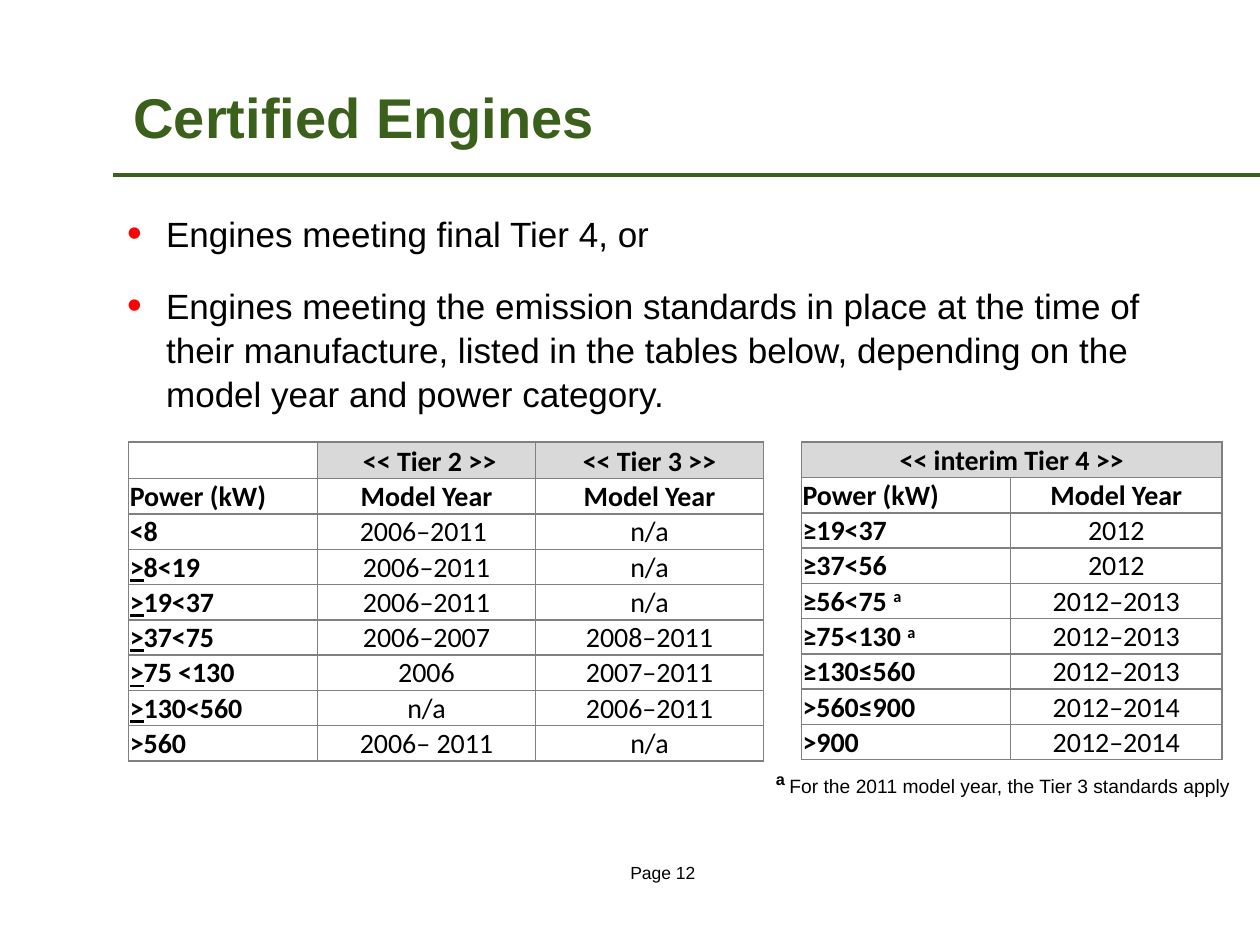
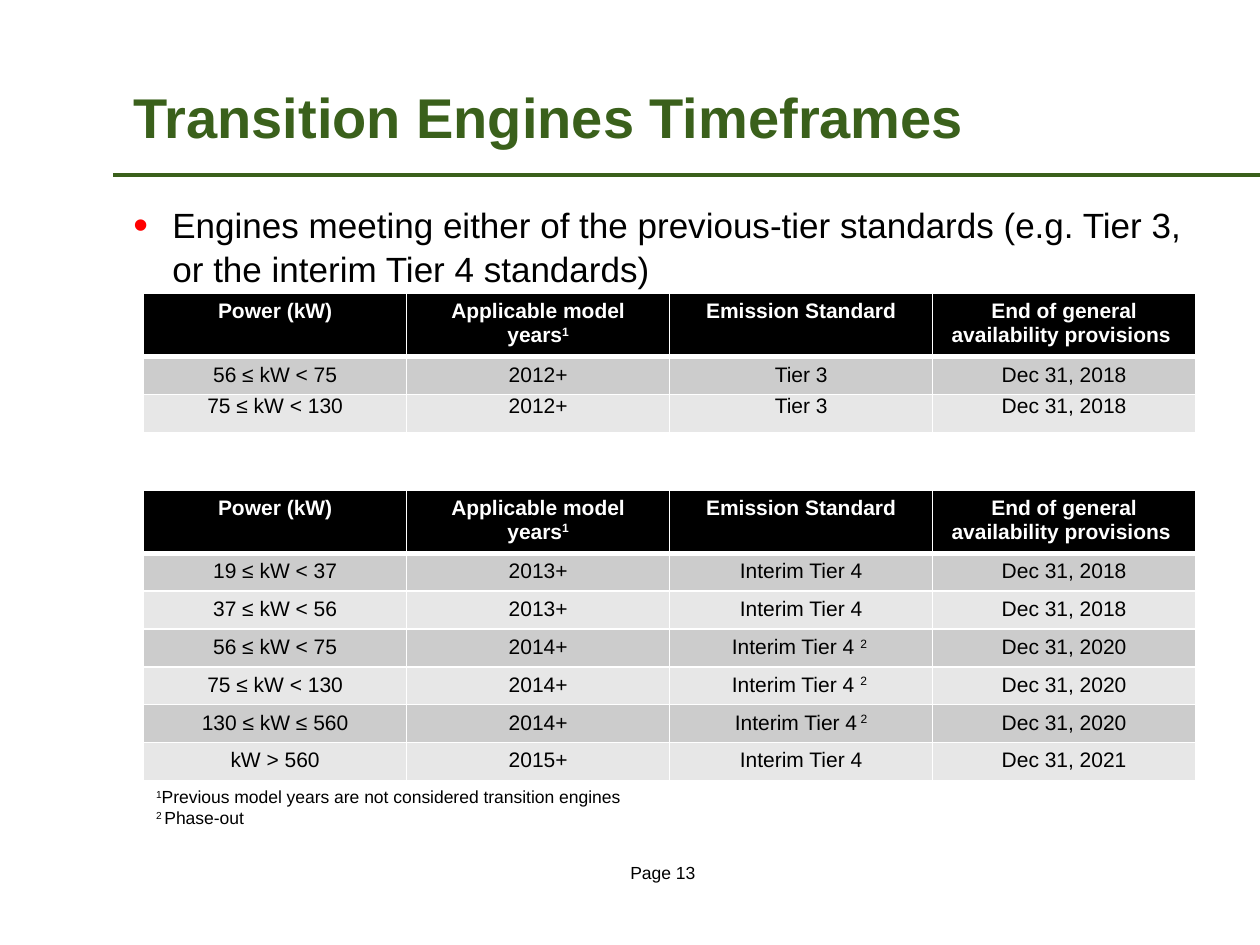
"""Builds two slides on certified and transition engines."""
from lxml.etree import SubElement
from pptx import Presentation
from pptx.dml.color import RGBColor
from pptx.enum.shapes import MSO_CONNECTOR
from pptx.enum.text import MSO_ANCHOR, PP_ALIGN
from pptx.oxml.ns import qn
from pptx.util import Inches, Pt

COLUMNS, ROWS = 100, 75
GREEN, RED, BLACK, WHITE = "3A601B", "FF0000", "000000", "FFFFFF"
LINE_GREY, HEAD_GREY, BANDS = "808080", "D9D9D9", ("CCCCCC", "E7E7E7")


def color(hex_code):
    """Turn a hex string into a colour."""
    return RGBColor.from_string(hex_code)


def grid(*units):
    """Turn grid units of a tenth of an inch into lengths."""
    return [Inches(unit / 10) for unit in units]


def raised(text):
    """Make a superscript run."""
    return text, {"raised": True}


def at_least(limit):
    """Make runs with an underlined greater-than sign before a limit."""
    return [(">", {"underline": True}), limit]


class Deck:
    """Holds the shared style and the current slide."""

    def __init__(self):
        """Start an empty presentation."""
        self.presentation = Presentation()
        self.presentation.slide_width, self.presentation.slide_height = grid(COLUMNS, ROWS)
        self.slide = None

    def new_slide(self, heading, page):
        """Add a slide with its title, rule and page number."""
        self.slide = self.presentation.slides.add_slide(self.presentation.slide_layouts[5])
        title = self.slide.shapes.title
        title.left, title.top, title.width, title.height = grid(9.6, 3, 86.8, 12.5)
        title.text_frame.vertical_anchor = MSO_ANCHOR.MIDDLE
        self.add_runs(title.text_frame.paragraphs[0], heading, 32, GREEN, bold=True)
        self.rule(9, 13.9, COLUMNS)
        self.text((8.3, 67.9, 89, 2.7), [f"Page {page} "], 10, align=PP_ALIGN.CENTER)

    def add_runs(self, paragraph, content, size, hex_code=BLACK, bold=False,
                 face="Arial", align=PP_ALIGN.LEFT):
        """Fill a paragraph with runs, each a string or a (string, style) pair."""
        paragraph.alignment = align
        for part in [content] if isinstance(content, str) else content:
            words, style = (part, {}) if isinstance(part, str) else part
            if not words:
                SubElement(paragraph._p, qn("a:endParaRPr"), sz=str(size * 100))
                continue
            run = paragraph.add_run()
            run.text = words
            run.font.name, run.font.size = face, Pt(style.get("size", size))
            run.font.bold = style.get("bold", bold)
            run.font.color.rgb = color(hex_code)
            if style.get("underline"):
                run.font.underline = True
            if style.get("raised"):
                run._r.get_or_add_rPr().set("baseline", "30000")

    def rule(self, left, top, right):
        """Draw a horizontal line."""
        line = self.slide.shapes.add_connector(
            MSO_CONNECTOR.STRAIGHT, *grid(left, top, right, top))
        line.line.color.rgb, line.line.width = color(GREEN), Pt(2.25)
        SubElement(line._element.spPr, qn("a:effectLst"))

    def text(self, place, paragraphs, size, align=PP_ALIGN.LEFT):
        """Add a wrapped text box and return its paragraphs."""
        frame = self.slide.shapes.add_textbox(*grid(*place)).text_frame
        frame.word_wrap = True
        for index, content in enumerate(paragraphs):
            paragraph = frame.add_paragraph() if index else frame.paragraphs[0]
            self.add_runs(paragraph, content, size, align=align)
        return frame.paragraphs

    def bullets(self, place, points):
        """Add a bulleted list."""
        for index, paragraph in enumerate(self.text(place, points, 20)):
            paragraph.line_spacing = 1.05
            paragraph.space_before, paragraph.space_after = Pt(4 if index else 0), Pt(12)
            properties = paragraph._p.get_or_add_pPr()
            properties.set("marL", str(Inches(0.31)))
            properties.set("indent", str(-Inches(0.31)))
            SubElement(SubElement(properties, qn("a:buClr")), qn("a:srgbClr"), val=RED)
            SubElement(properties, qn("a:buSzPct"), val="120000")
            SubElement(properties, qn("a:buFont"), typeface="Arial")
            SubElement(properties, qn("a:buChar"), char="•")

    def table(self, left, top, widths, heights, rows):
        """Add a plain table and return it."""
        place = grid(left, top, sum(widths), sum(heights))
        table = self.slide.shapes.add_table(len(rows), len(widths), *place).table
        table.first_row = table.horz_banding = False
        for column, width in zip(table.columns, grid(*widths)):
            column.width = width
        for row, height in zip(table.rows, grid(*heights)):
            row.height = height
        return table

    def cell(self, cell, edge, fill=None, top=1, bottom=1, margins=None):
        """Set the borders, fill and margins of a cell."""
        properties = cell._tc.get_or_add_tcPr()
        for side, width in zip("LRTB", (1, 1, top, bottom)):
            border = SubElement(properties, qn(f"a:ln{side}"), w=str(Pt(width)))
            SubElement(SubElement(border, qn("a:solidFill")), qn("a:srgbClr"), val=edge)
        if fill:
            cell.fill.solid()
            cell.fill.fore_color.rgb = color(fill)
        else:
            cell.fill.background()
        if margins:
            (cell.margin_left, cell.margin_top,
             cell.margin_right, cell.margin_bottom) = grid(*margins)

    def power_table(self, left, widths, first_height, rows):
        """Add a tight grey-lined table of model years by power."""
        heights = [first_height] + [2.8] * (len(rows) - 1)
        table = self.table(left, 35.1, widths, heights, rows)
        if not rows[0][-1]:
            table.cell(0, 0).merge(table.cell(0, len(widths) - 1))
        for r, row in enumerate(rows):
            for c, content in enumerate(row):
                cell = table.cell(r, c)
                self.cell(cell, LINE_GREY, HEAD_GREY if r == 0 and content else None,
                          margins=(0.1, 0.1, 0.1, 0))
                cell.vertical_anchor = MSO_ANCHOR.BOTTOM
                self.add_runs(cell.text_frame.paragraphs[0], content, 16,
                              bold=r < 2 or c == 0, face="Calibri",
                              align=PP_ALIGN.LEFT if c == 0 and r else PP_ALIGN.CENTER)

    def timeframe_table(self, top, rows, tight_row=None):
        """Add a banded table of transition timeframes under a black header."""
        rows = [["Power (kW)", ["Applicable model years", raised("1")], "Emission Standard",
                 "End of general availability provisions "]] + rows
        heights = [5] + [3] * (len(rows) - 1)
        table = self.table(11.4, top, [83.5 / 4] * 4, heights, rows)
        for r, row in enumerate(rows):
            header = r == 0
            for c, content in enumerate(row):
                cell = table.cell(r, c)
                self.cell(cell, WHITE, BLACK if header else BANDS[(r - 1) % 2],
                          top=3 if r == 1 else 1, bottom=3 if header else 1,
                          margins=(0.7, 0, 0.7, 0) if r == tight_row else None)
                self.add_runs(cell.text_frame.paragraphs[0], content, 12,
                              WHITE if header else BLACK, header, align=PP_ALIGN.CENTER)


def certified_engines(deck):
    """Build the slide on certified engines."""
    deck.new_slide("Certified Engines", 12)
    deck.bullets((9.1, 16.2, 86.8, 18), [
        "Engines meeting final Tier 4, or",
        "Engines meeting the emission standards in place at the time of their manufacture, "
        "listed in the tables below, depending on the model year and power category."])
    deck.power_table(10.2, [15, 17.3, 18.1], 2.9, [
        ["", " << Tier 2 >>", "<< Tier 3 >>"],
        ["Power (kW)", "Model Year", "Model Year"],
        ["<8", "2006–2011 ", "n/a"],
        [at_least("8<19"), "2006–2011", "n/a"],
        [at_least("19<37"), "2006–2011", "n/a"],
        [at_least("37<75"), "2006–2007", "2008–2011"],
        [at_least("75 <130"), "2006", "2007–2011"],
        [at_least("130<560"), "n/a", "2006–2011"],
        [">560", "2006– 2011", "n/a"]])
    deck.power_table(63.6, [16.6, 16.8], 2.8, [
        ["<< interim Tier 4 >>", ""],
        ["Power (kW)", "Model Year"],
        ["≥19<37", "2012"],
        ["≥37<56", "2012"],
        [["≥56<75 ", raised("a")], "2012–2013"],
        [["≥75<130 ", raised("a")], "2012–2013"],
        ["≥130≤560", "2012–2013"],
        [">560≤900", "2012–2014"],
        [">900", "2012–2014"]])
    deck.text((60.6, 60.3, 39.4, 2.9), [[
        ("a ", {"raised": True, "bold": True, "size": 16}),
        "For the 2011 model year, the Tier 3 standards apply"]], 11)


def transition_timeframes(deck):
    """Build the slide on transition engines."""
    deck.new_slide("Transition Engines Timeframes", 13)
    deck.bullets((9.6, 15.5, 86.8, 8), [
        "Engines meeting either of the previous-tier standards "
        "(e.g. Tier 3, or the interim Tier 4 standards)"])
    deck.text((11.4, 61.9, 83.5, 4.3), [
        [raised("1"), "Previous model years are not considered transition engines"],
        [raised("2 "), "Phase-out"]], 10)
    deck.timeframe_table(23.3, [
        ["56 ≤ kW < 75", "2012+", "Tier 3", "Dec 31, 2018"],
        ["75 ≤ kW < 130", "2012+", "Tier 3", "Dec 31, 2018"]], tight_row=2)
    phase_out = ["Interim Tier 4 ", raised("2 ")]
    deck.timeframe_table(38.9, [
        ["19 ≤ kW < 37", "2013+", "Interim Tier 4", "Dec 31, 2018"],
        ["37 ≤ kW < 56", "2013+", "Interim Tier 4", "Dec 31, 2018"],
        ["56 ≤ kW < 75", "2014+", phase_out, "Dec 31, 2020"],
        ["75 ≤ kW < 130", "2014+", phase_out, "Dec 31, 2020"],
        ["130 ≤ kW ≤ 560", "2014+", ["Interim Tier 4", raised(" 2")], "Dec 31, 2020"],
        ["kW > 560", "2015+", "Interim Tier 4", "Dec 31, 2021"]])


def main():
    """Build and save the slides."""
    deck = Deck()
    certified_engines(deck)
    transition_timeframes(deck)
    deck.presentation.save("out.pptx")


if __name__ == "__main__":
    main()
